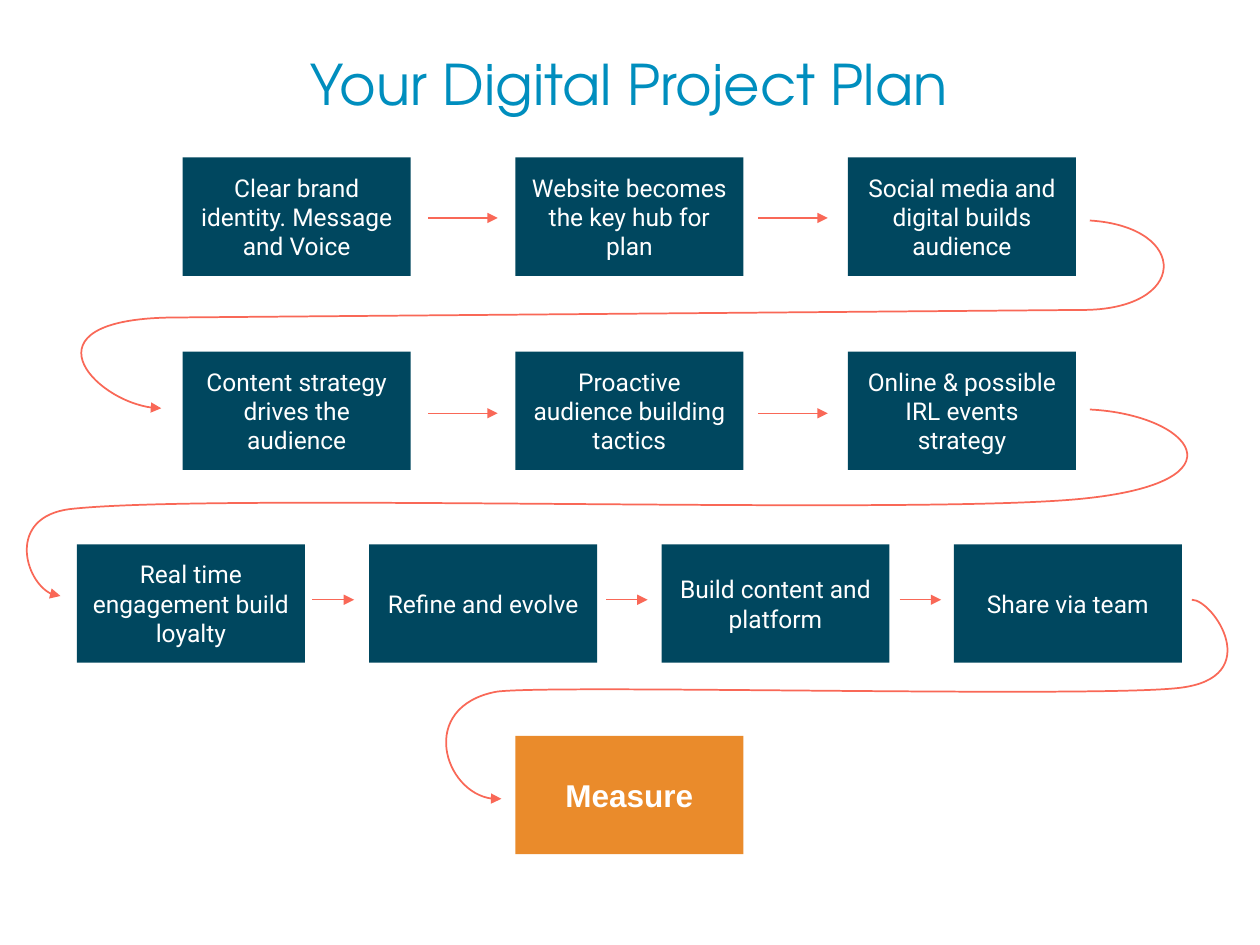
from dataclasses import dataclass

from lxml.etree import SubElement
from pptx import Presentation
from pptx.dml.color import RGBColor
from pptx.enum.shapes import MSO_CONNECTOR as Connector, MSO_SHAPE as Shape
from pptx.enum.text import MSO_ANCHOR as Anchor, PP_ALIGN as Align
from pptx.oxml.ns import qn
from pptx.util import Inches, Pt

Point = tuple[float, float]


@dataclass(frozen=True)
class TextStyle:
    font: str
    size: float
    color: RGBColor
    bold: bool = False


@dataclass(frozen=True)
class Theme:
    step_fill = RGBColor(0x00, 0x47, 0x5F)
    goal_fill = RGBColor(0xEA, 0x8B, 0x2B)
    arrow = RGBColor(0xF9, 0x68, 0x57)
    arrow_width = 0.75
    curve_width = 1
    title = TextStyle("TeX Gyre Adventor", 32, RGBColor(0x00, 0x8E, 0xBE))
    step = TextStyle("Roboto", 14, RGBColor(0xFF, 0xFF, 0xFF))
    goal = TextStyle("Arial", 18, RGBColor(0xFF, 0xFF, 0xFF), True)


@dataclass(frozen=True)
class StepRow:
    left: float
    top: float
    pitch: float
    steps: tuple[str, ...]
    arrow_left: float
    arrow_y: float
    arrow_pitch: float
    arrow_length: float


@dataclass(frozen=True)
class Curve:
    """A start point and cubic segments of two control points and an end."""
    start: Point
    segments: tuple[tuple[Point, Point, Point], ...]


THEME = Theme()
BOX_W, BOX_H = 1.81, 0.94

ROWS = (
    StepRow(1.45, 1.25, 2.64,
            ("Clear brand identity. Message and Voice",
             "Website becomes the key hub for plan",
             "Social media and digital builds audience"),
            3.4, 1.73, 2.62, 0.55),
    StepRow(1.45, 2.79, 2.64,
            ("Content strategy drives the audience",
             "Proactive audience building tactics",
             "Online & possible IRL events strategy"),
            3.4, 3.28, 2.62, 0.55),
    StepRow(0.61, 4.32, 2.32,
            ("Real time engagement build loyalty",
             "Refine and evolve",
             "Build content and platform",
             "Share via team"),
            2.48, 4.76, 2.33, 0.33),
)

CURVES = (
    Curve((8.65, 1.75), (
        ((9.45, 1.8), (9.44, 2.47), (8.57, 2.46)),
        ((6.16, 2.48), (3.76, 2.5), (1.35, 2.52)),
        ((0.16, 2.54), (0.79, 3.24), (1.28, 3.24)))),
    Curve((8.65, 3.25), (
        ((9.45, 3.29), (9.92, 3.83), (8.57, 3.96)),
        ((7.22, 4.09), (1.73, 3.91), (0.56, 4.04)),
        ((0.05, 4.1), (0.22, 4.73), (0.48, 4.73)))),
    Curve((9.46, 4.76), (
        ((9.63, 4.76), (10.05, 5.38), (9.36, 5.46)),
        ((8.68, 5.54), (4.36, 5.43), (3.94, 5.49)),
        ((3.31, 5.61), (3.55, 6.38), (3.98, 6.34)))),
)


def add_text(tf, text: str, style: TextStyle) -> None:
    tf.word_wrap = True
    p = tf.paragraphs[0]
    p.alignment = Align.CENTER
    r = p.add_run()
    r.text = text
    r.font.name = style.font
    r.font.size = Pt(style.size)
    r.font.bold = style.bold
    r.font.color.rgb = style.color


def add_title(s, text: str) -> None:
    tf = s.shapes.add_textbox(Inches(0.68), Inches(0.39), Inches(8.63), Inches(0.54)).text_frame
    tf.margin_left = tf.margin_top = tf.margin_right = tf.margin_bottom = 0
    add_text(tf, text, THEME.title)


def add_box(s, left: float, top: float, text: str, fill: RGBColor, style: TextStyle) -> None:
    sp = s.shapes.add_shape(Shape.RECTANGLE, Inches(left), Inches(top), Inches(BOX_W), Inches(BOX_H))
    sp.shadow.inherit = False
    sp.fill.solid()
    sp.fill.fore_color.rgb = fill
    sp.line.fill.background()
    sp.text_frame.vertical_anchor = Anchor.MIDDLE
    add_text(sp.text_frame, text, style)


def style_arrow(line, width: float) -> None:
    line.color.rgb = THEME.arrow
    line.width = Pt(width)
    SubElement(line.color._xFill.getparent(), qn("a:tailEnd"), type="triangle")


def add_arrow(s, left: float, y: float, length: float) -> None:
    line = s.shapes.add_connector(Connector.STRAIGHT, Inches(left), Inches(y),
                                  Inches(left + length), Inches(y))
    style_arrow(line.line, THEME.arrow_width)
    SubElement(line._element.spPr, qn("a:effectLst"))


def bezier(points: tuple[Point, ...], t: float) -> Point:
    weights = ((1 - t) ** 3, 3 * t * (1 - t) ** 2, 3 * t ** 2 * (1 - t), t ** 3)
    x, y = (sum(w * v for w, v in zip(weights, axis)) for axis in zip(*points))
    return x, y


def add_curve(s, curve: Curve, samples: int = 40) -> None:
    """Size a freeform from points on the curve, then give it true cubic segments."""
    outline, start = [], curve.start
    for segment in curve.segments:
        outline += [bezier((start, *segment), i / samples) for i in range(1, samples + 1)]
        start = segment[-1]
    builder = s.shapes.build_freeform(*map(Inches, curve.start), scale=1.0)
    builder.add_line_segments([(Inches(x), Inches(y)) for x, y in outline], close=False)
    sp = builder.convert_to_shape()

    track = next(sp._element.iter(qn("a:path")))
    for line_to in track.findall(qn("a:lnTo")):
        track.remove(line_to)
    for segment in curve.segments:
        cubic = SubElement(track, qn("a:cubicBezTo"))
        for x, y in segment:
            SubElement(cubic, qn("a:pt"), x=str(Inches(x) - sp.left), y=str(Inches(y) - sp.top))

    sp.shadow.inherit = False
    sp.fill.background()
    style_arrow(sp.line, THEME.curve_width)


def add_row(s, row: StepRow) -> None:
    for i, step in enumerate(row.steps):
        add_box(s, row.left + i * row.pitch, row.top, step, THEME.step_fill, THEME.step)
    for i in range(len(row.steps) - 1):
        add_arrow(s, row.arrow_left + i * row.arrow_pitch, row.arrow_y, row.arrow_length)


def main() -> None:
    prs = Presentation()
    prs.slide_width, prs.slide_height = Inches(10), Inches(7.5)
    s = prs.slides.add_slide(prs.slide_layouts[6])
    add_title(s, "Your Digital Project Plan")
    for row in ROWS:
        add_row(s, row)
    add_box(s, 4.09, 5.84, "Measure", THEME.goal_fill, THEME.goal)
    for curve in CURVES:
        add_curve(s, curve)
    prs.save("out.pptx")


if __name__ == "__main__":
    main()
